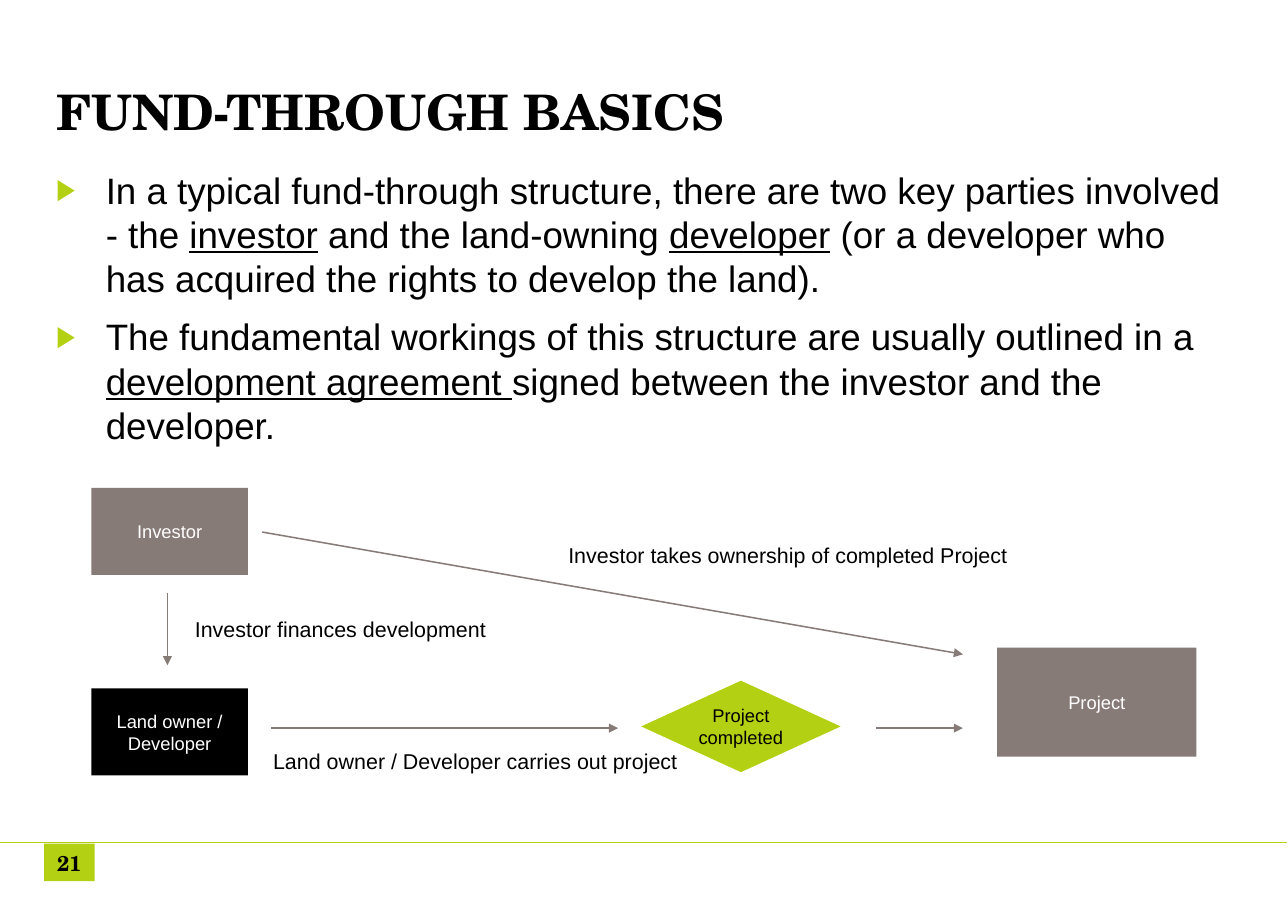
import dataclasses

import pptx
import pptx.dml.color
import pptx.enum.shapes
import pptx.enum.text
import pptx.oxml
import pptx.oxml.ns
import pptx.util
from pptx.util import Inches

SHAPE = pptx.enum.shapes.MSO_SHAPE
ALIGN = pptx.enum.text.PP_ALIGN
ANCHOR = pptx.enum.text.MSO_ANCHOR


@dataclasses.dataclass(frozen=True)
class Theme:
    black: str = "000000"
    white: str = "FFFFFF"
    lime: str = "B4D012"
    taupe: str = "877B77"
    heading_font: str = "TeX Gyre Schola"
    body_font: str = "Arial"
    title_size: int = 32
    body_size: int = 24
    label_size: int = 14
    node_size: int = 12


def rgb(value):
    return pptx.dml.color.RGBColor.from_string(value)


def drawing_xml(tag, content=""):
    return pptx.oxml.parse_xml(f"<a:{tag} {pptx.oxml.ns.nsdecls('a')} {content}/>")


def add_text(paragraph, text, *, size, color, font, bold=False, underline=False):
    run = paragraph.add_run()
    run.text = text
    run.font.size = pptx.util.Pt(size)
    run.font.name = font
    run.font.bold = bold
    run.font.underline = underline
    run.font.color.rgb = rgb(color)


class SlideBuilder:
    def __init__(self, slide, theme):
        self.shapes = slide.shapes
        self.theme = theme

    def frame(self, shape, insets, anchor, wrap=True):
        frame = shape.text_frame
        frame.word_wrap = wrap
        frame.vertical_anchor = anchor
        frame.margin_left = frame.margin_right = Inches(insets[0])
        frame.margin_top = frame.margin_bottom = Inches(insets[1])
        return frame

    def text_area(self, box, insets=(0.1, 0.05), anchor=ANCHOR.TOP, wrap=True):
        area = self.shapes.add_textbox(*map(Inches, box))
        return self.frame(area, insets, anchor, wrap)

    def title(self, box, text):
        frame = self.text_area(box, (0.11, 0.06), ANCHOR.MIDDLE)
        add_text(frame.paragraphs[0], text, size=self.theme.title_size,
                 color=self.theme.black, font=self.theme.heading_font, bold=True)

    def bullets(self, box, points):
        frame = self.text_area(box, (0.11, 0.06))
        for index, point in enumerate(points):
            paragraph = frame.paragraphs[0] if index == 0 else frame.add_paragraph()
            properties = paragraph._p.get_or_add_pPr()
            properties.set("marL", str(Inches(0.45)))
            properties.set("indent", str(-Inches(0.45)))
            bullet_color = drawing_xml("buClr")
            bullet_color.append(drawing_xml("srgbClr", f'val="{self.theme.lime}"'))
            properties.append(bullet_color)
            properties.append(drawing_xml("buSzPct", 'val="80000"'))
            properties.append(drawing_xml("buFont", f'typeface="{self.theme.body_font}"'))
            properties.append(drawing_xml("buChar", 'char="▶"'))
            paragraph.space_before = pptx.util.Pt(5 if index else 0)
            paragraph.space_after = pptx.util.Pt(4.6)
            for text, underline in point:
                add_text(paragraph, text, size=self.theme.body_size, color=self.theme.black,
                         font=self.theme.body_font, underline=underline)

    def label(self, box, text, wrap=True):
        frame = self.text_area(box, wrap=wrap)
        add_text(frame.paragraphs[0], text, size=self.theme.label_size,
                 color=self.theme.black, font=self.theme.body_font)

    def node(self, box, text, fill, color, kind=SHAPE.RECTANGLE, insets=(0.1, 0.05), **style):
        node = self.shapes.add_shape(kind, *map(Inches, box))
        node.shadow.inherit = False
        node.fill.solid()
        node.fill.fore_color.rgb = rgb(fill)
        node.line.fill.background()
        paragraph = self.frame(node, insets, ANCHOR.MIDDLE).paragraphs[0]
        paragraph.alignment = ALIGN.CENTER
        style = {"size": self.theme.node_size, "font": self.theme.body_font, **style}
        add_text(paragraph, text, color=color, **style)

    def line(self, start, end, color, width):
        line = self.shapes.add_connector(pptx.enum.shapes.MSO_CONNECTOR.STRAIGHT,
                                         *map(Inches, start + end))
        line.line.color.rgb = rgb(color)
        line.line.width = pptx.util.Pt(width)
        line._element.spPr.append(drawing_xml("effectLst"))
        return line

    def arrow(self, start, end):
        arrow = self.line(start, end, self.theme.taupe, 1)
        arrow.line._get_or_add_ln().append(drawing_xml("tailEnd", 'type="triangle"'))


def main():
    deck = pptx.Presentation()
    deck.slide_width, deck.slide_height = Inches(11.69), Inches(8.27)
    theme = Theme()
    builder = SlideBuilder(deck.slides.add_slide(deck.slide_layouts[6]), theme)

    builder.line((-0.01, 7.65), (11.68, 7.65), theme.lime, 0.75)
    builder.title((0.4, 0.4, 10.88, 1.22), "FUND-THROUGH BASICS")
    builder.bullets((0.4, 1.46, 10.88, 2.83), [
        [("In a typical fund-through structure, there are two key parties involved - the ", False),
         ("investor", True),
         (" and the land-owning ", False),
         ("developer", True),
         (" (or a developer who has acquired the rights to develop the land).", False)],
        [("The fundamental workings of this structure are usually outlined in a ", False),
         ("development agreement ", True),
         ("signed between the investor and the developer.", False)],
    ])
    builder.node((0.4, 7.66, 0.46, 0.34), "21", theme.lime, theme.black, insets=(0.02, 0.06),
                 size=theme.label_size, font=theme.heading_font, bold=True)

    builder.node((0.83, 4.43, 1.42, 0.79), "Investor", theme.taupe, theme.white)
    builder.node((0.83, 6.25, 1.42, 0.79), "Land owner / Developer", theme.black, theme.white)
    builder.node((5.82, 6.18, 1.81, 0.83), "Project completed", theme.lime, theme.black,
                 kind=SHAPE.DIAMOND, insets=(0.04, 0.05))
    builder.node((9.05, 5.88, 1.81, 0.99), "Project", theme.taupe, theme.white,
                 insets=(0.04, 0.05))

    for start, end in [
        ((1.52, 5.38), (1.52, 6.04)),
        ((2.46, 6.61), (5.61, 6.61)),
        ((7.95, 6.61), (8.74, 6.61)),
        ((2.38, 4.83), (8.74, 5.94)),
    ]:
        builder.arrow(start, end)

    builder.label((1.67, 5.54, 3.71, 0.34), "Investor finances development")
    builder.label((2.38, 6.74, 3.89, 0.34), "Land owner / Developer carries out project", wrap=False)
    builder.label((5.06, 4.87, 4.23, 0.34), "Investor takes ownership of completed Project")

    deck.save("out.pptx")


if __name__ == "__main__":
    main()
